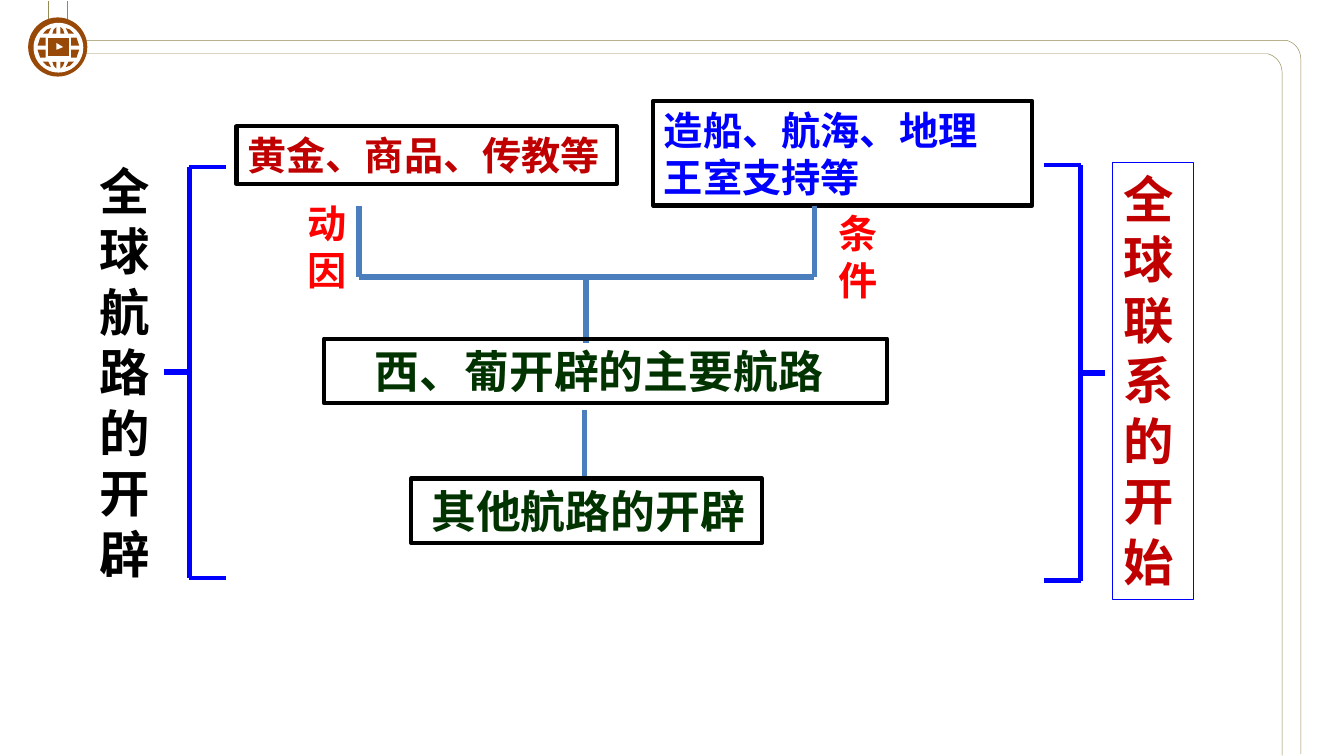
from lxml import etree
from pptx import Presentation
from pptx.dml.color import RGBColor
from pptx.enum.shapes import MSO_CONNECTOR, MSO_SHAPE
from pptx.enum.text import MSO_ANCHOR, MSO_AUTO_SIZE, PP_ALIGN
from pptx.oxml.ns import qn
from pptx.util import Inches, Pt

STRAIGHT = MSO_CONNECTOR.STRAIGHT
RECT, OVAL = MSO_SHAPE.RECTANGLE, MSO_SHAPE.OVAL
TOP, LEFT, NO_FIT = MSO_ANCHOR.TOP, PP_ALIGN.LEFT, MSO_AUTO_SIZE.NONE

FONT = "Noto Sans CJK SC"
OLIVE, BROWN, WHITE, BLACK = "948A54", "984807", "FFFFFF", "000000"
BLUE, STEEL, CRIMSON, RED, GREEN = "0000FF", "4B7EBC", "C00000", "FF0000", "003300"
LINE_HEIGHT = 1.2


def color(value):
    return RGBColor.from_string(value)


def paint(sp, fill=None, line=None, width=0.75):
    sp.shadow.inherit = False
    if fill:
        sp.fill.solid()
        sp.fill.fore_color.rgb = color(fill)
    else:
        sp.fill.background()
    if line:
        sp.line.color.rgb = color(line)
        sp.line.width = Pt(width)
    else:
        sp.line.fill.background()


def write(sp, lines, size, text_color, left=0.07):
    """Fill a shape with bold, top-left text, one paragraph per line."""
    tf = sp.text_frame
    tf.word_wrap = True
    tf.auto_size = NO_FIT
    tf.vertical_anchor = TOP
    tf.margin_left, tf.margin_right = Inches(left), Inches(0.07)
    tf.margin_top = tf.margin_bottom = Inches(0.04)
    for i, line in enumerate(lines):
        p = tf.paragraphs[0] if i == 0 else tf.add_paragraph()
        p.alignment = LEFT
        p.line_spacing = Pt(LINE_HEIGHT * size)
        r = p.add_run()
        r.text = line
        r.font.name, r.font.size, r.font.bold = FONT, Pt(size), True
        r.font.color.rgb = color(text_color)
        ea = etree.SubElement(r.font._element, qn("a:ea"))
        ea.set("typeface", FONT)


def add_box(s, at, lines, size, text_color, line=BLACK, width=2.25, left=0.08):
    sp = s.shapes.add_shape(RECT, *map(Inches, at))
    paint(sp, line=line, width=width)
    write(sp, lines, size, text_color, left)


def add_label(s, at, text):
    write(s.shapes.add_textbox(*map(Inches, at)), [text], 21, RED)


def add_line(s, x1, y1, x2, y2, line, width):
    sp = s.shapes.add_connector(STRAIGHT, *map(Inches, (x1, y1, x2, y2)))
    sp.line.color.rgb = color(line)
    sp.line.width = Pt(width)
    etree.SubElement(sp._element.spPr, qn("a:effectLst"))


def add_outline(s, points, closed=True, **style):
    pts = [(Inches(x), Inches(y)) for x, y in points]
    builder = s.shapes.build_freeform(*pts[0])
    builder.add_line_segments(pts[1:], close=closed)
    paint(builder.convert_to_shape(), **style)


def add_frame(s, left, top, right, bottom):
    """Top and right page rule joined by a rounded corner."""
    rx, ry, steps = 0.11, 0.15, 12
    corner = []
    for i in range(steps + 1):
        t = i / steps
        u = 1 - t
        x = right - rx * (u ** 3 + 3 * u * u * t)
        y = top + ry * (3 * u * t * t * 0.13 + t ** 3)
        corner.append((x, y))
    add_outline(s, [(left, top), *corner, (right, bottom)], closed=False,
                line=OLIVE, width=0.25)


def add_globe(s):
    for x, y, d, fill in ((0.21, 0.13, 0.44, BROWN), (0.25, 0.17, 0.37, WHITE)):
        sp = s.shapes.add_shape(OVAL, *map(Inches, (x, y, d, d)))
        paint(sp, fill=fill)
    # Upper-left grid pieces, mirrored into the four quarters
    pieces = (
        [(0.42, 0.25), (0.42, 0.2), (0.4, 0.22), (0.39, 0.25)],
        [(0.34, 0.28), (0.3, 0.28), (0.29, 0.31), (0.28, 0.34), (0.34, 0.34)],
        [(0.38, 0.21), (0.35, 0.22), (0.32, 0.25), (0.36, 0.25)],
    )
    for piece in pieces:
        for flip_x in (False, True):
            for flip_y in (False, True):
                add_outline(s, [(0.87 - x if flip_x else x,
                                 0.71 - y if flip_y else y)
                                for x, y in piece], fill=BROWN)
    # Play button
    add_outline(s, [(0.36, 0.28), (0.51, 0.28), (0.51, 0.42), (0.36, 0.42)], fill=BROWN)
    add_outline(s, [(0.42, 0.32), (0.47, 0.35), (0.42, 0.37)], fill=WHITE)


def add_bracket(s, spine, arm, tip, top, bottom):
    middle = (top + bottom) / 2
    for y in (top, bottom):
        add_line(s, spine, y, arm, y, BLUE, 2.25)
    add_line(s, spine, top, spine, bottom, BLUE, 3)
    add_line(s, spine, middle, tip, middle, BLUE, 3)


def main():
    prs = Presentation()
    prs.slide_width = Inches(10)
    prs.slide_height = prs.slide_width * 9 // 16
    s = prs.slides.add_slide(prs.slide_layouts[5])

    # Page decoration
    add_frame(s, 0.35, 0.4, 9.54, 5.62)
    add_frame(s, 0.48, 0.3, 9.68, 5.61)
    add_line(s, 0.5, 0.3, 0.5, 0.01, OLIVE, 0.25)
    add_line(s, 0.36, 0.4, 0.36, 0.01, OLIVE, 0.25)
    add_globe(s)

    # Topic, outcome and their brackets
    title = s.shapes.title
    title.left, title.top, title.width, title.height = map(
        Inches, (0.67, 1.15, 0.62, 3.25))
    write(title, ["全球航路的开辟"], 27, BLACK)
    add_bracket(s, 1.41, 1.68, 1.22, 1.24, 4.3)
    add_bracket(s, 8.04, 7.77, 8.22, 1.23, 4.32)
    add_box(s, (8.28, 1.21, 0.6, 3.25), ["全球联系的开始"], 27, CRIMSON,
            line=BLUE, width=0.75)

    # Motives and conditions
    add_box(s, (1.76, 0.94, 2.83, 0.43), ["黄金、商品、传教等"], 21, CRIMSON)
    add_box(s, (4.86, 0.75, 2.82, 0.78), ["造船、航海、地理", "王室支持等"], 21, BLUE)

    # Lines joining both causes to the routes
    for x1, y1, x2, y2 in ((2.67, 1.53, 2.67, 2.06), (6.06, 1.53, 6.06, 2.06),
                           (2.67, 2.06, 6.06, 2.06), (4.36, 2.06, 4.36, 2.55),
                           (4.35, 3.05, 4.35, 3.55)):
        add_line(s, x1, y1, x2, y2, STEEL, 3)

    # Routes
    add_box(s, (2.41, 2.52, 4.19, 0.48), ["西、葡开辟的主要航路"], 24, GREEN, left=0.38)
    add_box(s, (3.06, 3.56, 2.61, 0.48), ["其他航路的开辟"], 24, GREEN, left=0.15)

    # Labels beside the joining lines
    add_label(s, (2.22, 1.44, 0.44, 0.78), "动因")
    add_label(s, (6.17, 1.52, 0.44, 0.78), "条件")

    prs.save("out.pptx")


if __name__ == "__main__":
    main()
